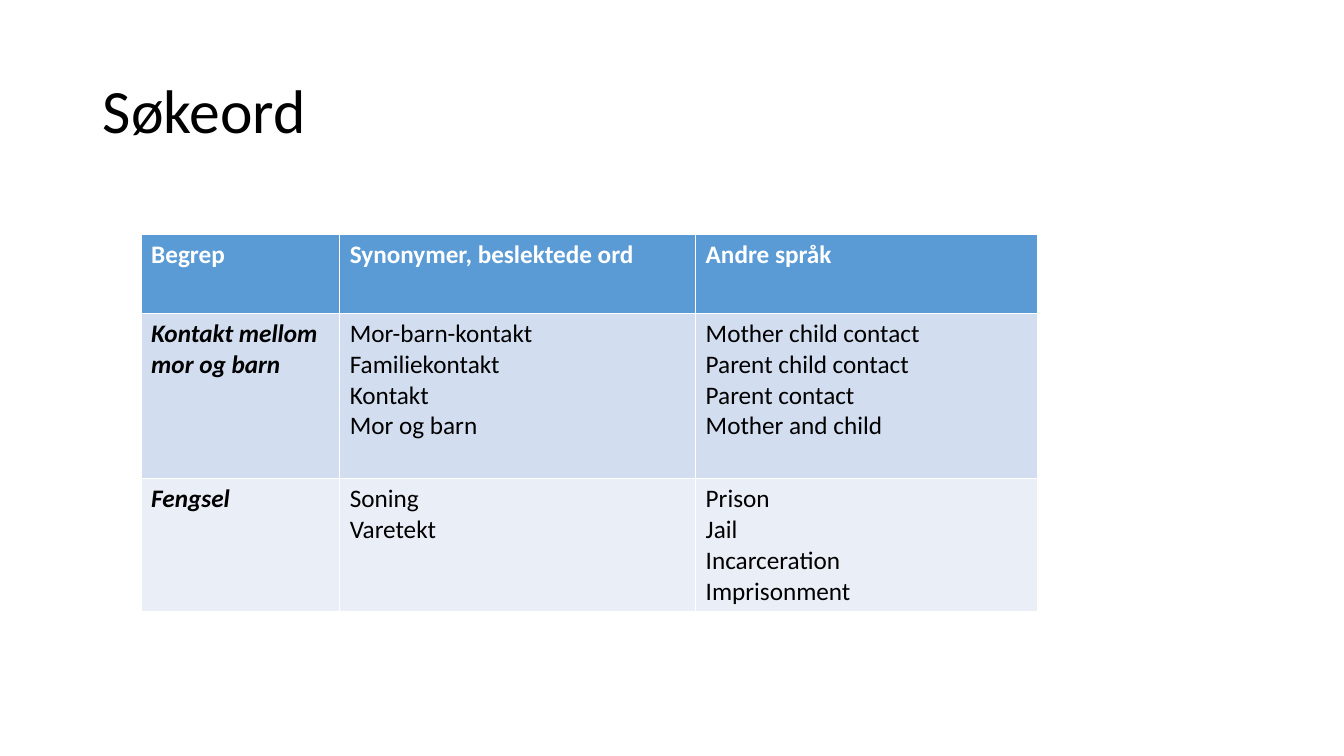
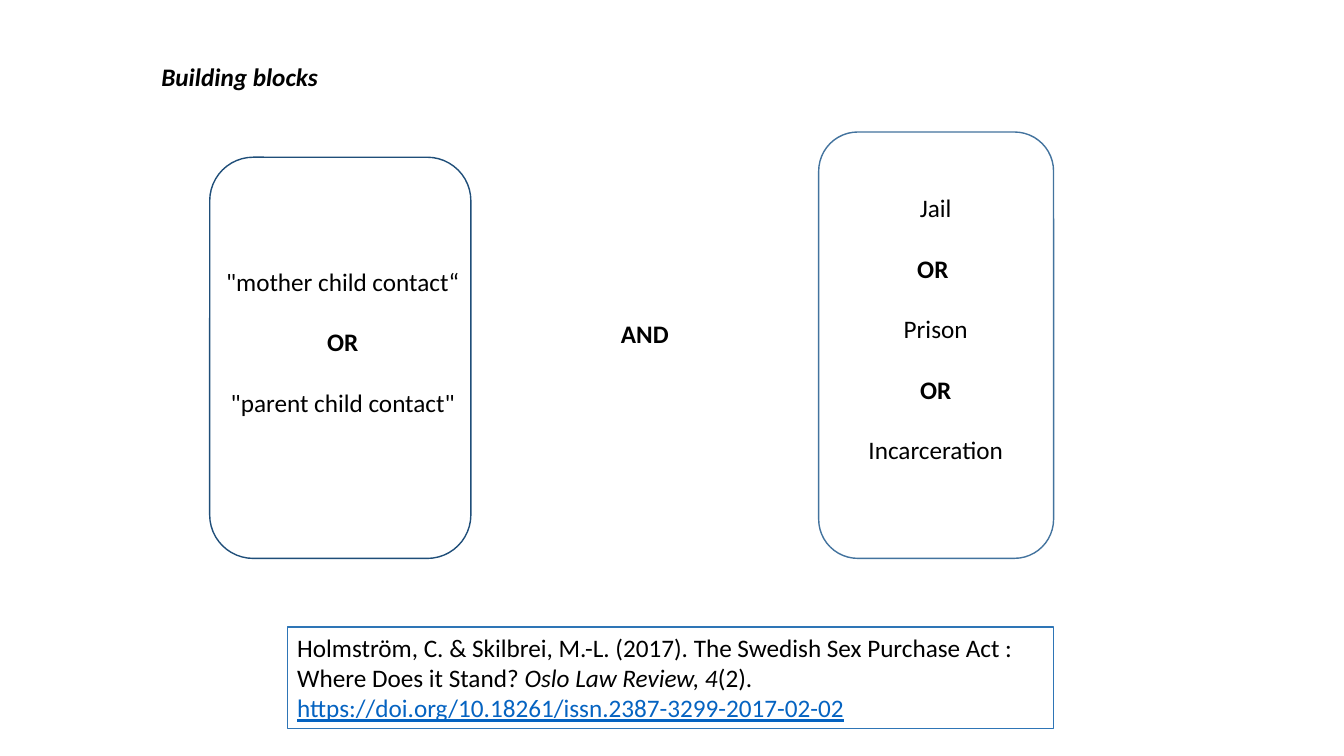
from pptx import Presentation
from pptx.dml.color import RGBColor
from pptx.enum.shapes import MSO_SHAPE
from pptx.enum.text import MSO_ANCHOR, MSO_AUTO_SIZE, PP_ALIGN
from pptx.util import Inches, Pt

ROUNDED = MSO_SHAPE.ROUNDED_RECTANGLE
RECTANGLE = MSO_SHAPE.RECTANGLE
MIDDLE = MSO_ANCHOR.MIDDLE
TOP = MSO_ANCHOR.TOP
FIXED = MSO_AUTO_SIZE.NONE
LEFT = PP_ALIGN.LEFT
CENTER = PP_ALIGN.CENTER

FONT = "Calibri"
BLACK = RGBColor(0x00, 0x00, 0x00)
WHITE = RGBColor(0xFF, 0xFF, 0xFF)
HEADER_BLUE = RGBColor(0x5B, 0x9B, 0xD5)
BAND_FILLS = [RGBColor(0xD2, 0xDE, 0xEF), RGBColor(0xEA, 0xEF, 0xF7)]
DARK_BLUE = RGBColor(0x1F, 0x4E, 0x79)
STEEL_BLUE = RGBColor(0x43, 0x73, 0x9E)
SOURCE_BLUE = RGBColor(0x2E, 0x75, 0xB6)
LINK_BLUE = RGBColor(0x05, 0x63, 0xC1)

TITLE_ONLY = 5

COLUMN_WIDTHS = [1.97, 3.53, 3.39]
ROW_HEIGHTS = [0.78, 1.64, 1.32]
HEADINGS = ["Begrep", "Synonymer, beslektede ord", "Andre språk"]
CONCEPTS = [
    [
        ["Kontakt mellom mor og barn"],
        ["Mor-barn-kontakt", "Familiekontakt", "Kontakt", "Mor og barn"],
        ["Mother child contact", "Parent child contact", "Parent contact", "Mother and child"],
    ],
    [
        ["Fengsel"],
        ["Soning", "Varetekt"],
        ["Prison", "Jail", "Incarceration", "Imprisonment"],
    ],
]
CONTACT_TERMS = ['"mother child contact“', "OR", '"parent child contact"']
PRISON_TERMS = ["Jail", "OR ", "Prison", "OR", "Incarceration"]
CITATION = [
    ("Holmström, C. & Skilbrei, M.-L. (2017). The Swedish Sex Purchase Act : Where Does it Stand? ", {}),
    ("Oslo Law Review, 4", {"italic": True}),
    ("(2). ", {}),
    ("https://doi.org/10.18261/issn.2387-3299-2017-02-02", {"color": LINK_BLUE, "underline": True}),
]


def add_span(para, text, size=18, color=BLACK, bold=False, italic=False, underline=False):
    span = para.add_run()
    span.text = text
    font = span.font
    font.name = FONT
    font.size = Pt(size)
    font.color.rgb = color
    font.bold = bold
    font.italic = italic
    font.underline = underline


def write_lines(frame, lines, align=LEFT, spacing=1.0, **style):
    for index, line in enumerate(lines):
        para = frame.add_paragraph() if index else frame.paragraphs[0]
        para.alignment = align
        para.line_spacing = spacing
        spans = [(line, {})] if isinstance(line, str) else line
        for text, changes in spans:
            add_span(para, text, **{**style, **changes})


def place(box):
    return [Inches(length) for length in box]


def add_title(page, text, box, anchor=MIDDLE, wrap=True, spacing=0.9, **style):
    title = page.shapes.title
    title.left, title.top, title.width, title.height = place(box)
    frame = title.text_frame
    frame.auto_size = FIXED
    frame.word_wrap = wrap
    frame.vertical_anchor = anchor
    write_lines(frame, [text], spacing=spacing, **style)


def add_label(page, lines, box, **style):
    frame = page.shapes.add_textbox(*place(box)).text_frame
    frame.word_wrap = False
    write_lines(frame, lines, **style)


def add_outline(page, kind, box, color, weight=1):
    outline = page.shapes.add_shape(kind, *place(box))
    outline.shadow.inherit = False
    outline.fill.background()
    outline.line.color.rgb = color
    outline.line.width = Pt(weight)
    return outline


def fill_cell(cell, lines, fill, **style):
    cell.fill.solid()
    cell.fill.fore_color.rgb = fill
    write_lines(cell.text_frame, lines, **style)


def add_concept_table(page, left, top):
    box = (left, top, sum(COLUMN_WIDTHS), sum(ROW_HEIGHTS))
    table = page.shapes.add_table(len(ROW_HEIGHTS), len(COLUMN_WIDTHS), *place(box)).table
    for column, width in zip(table.columns, COLUMN_WIDTHS):
        column.width = Inches(width)
    for row, height in zip(table.rows, ROW_HEIGHTS):
        row.height = Inches(height)
    for index, heading in enumerate(HEADINGS):
        fill_cell(table.cell(0, index), [heading], HEADER_BLUE, color=WHITE, bold=True)
    for row_index, (concept, fill) in enumerate(zip(CONCEPTS, BAND_FILLS), start=1):
        for index, lines in enumerate(concept):
            is_term = index == 0
            fill_cell(table.cell(row_index, index), lines, fill, bold=is_term, italic=is_term)


def add_block(page, terms, text_box, outline_box, color):
    lines = [[(term, {"bold": term.strip() == "OR"})] for term in terms]
    add_label(page, lines, text_box, align=CENTER, spacing=2.0)
    add_outline(page, ROUNDED, outline_box, color)


def add_citation(page, box):
    frame = add_outline(page, RECTANGLE, box, SOURCE_BLUE, weight=0.75).text_frame
    frame.word_wrap = True
    frame.vertical_anchor = TOP
    write_lines(frame, [CITATION])


def build_search_terms(deck):
    page = deck.slides.add_slide(deck.slide_layouts[TITLE_ONLY])
    add_title(page, "Søkeord", (0.92, 0.4, 11.5, 1.45), size=44)
    add_concept_table(page, 1.4, 2.33)


def build_building_blocks(deck):
    page = deck.slides.add_slide(deck.slide_layouts[TITLE_ONLY])
    add_title(page, "Building blocks", (1.5, 0.56, 1.82, 0.4), anchor=TOP, wrap=False,
              spacing=1.0, bold=True, italic=True)
    add_block(page, CONTACT_TERMS, (2.13, 2.29, 2.54, 2.52), (2.08, 1.56, 2.59, 3.98), DARK_BLUE)
    add_label(page, ["AND"], (6.06, 3.11, 0.68, 0.4), bold=True)
    add_block(page, PRISON_TERMS, (8.47, 1.56, 1.62, 3.74), (8.12, 1.31, 2.33, 4.23), STEEL_BLUE)
    add_citation(page, (2.85, 6.22, 7.6, 1.01))


def main():
    deck = Presentation()
    deck.slide_width = Inches(13.33)
    deck.slide_height = Inches(7.5)
    build_search_terms(deck)
    build_building_blocks(deck)
    deck.save("out.pptx")


if __name__ == "__main__":
    main()
